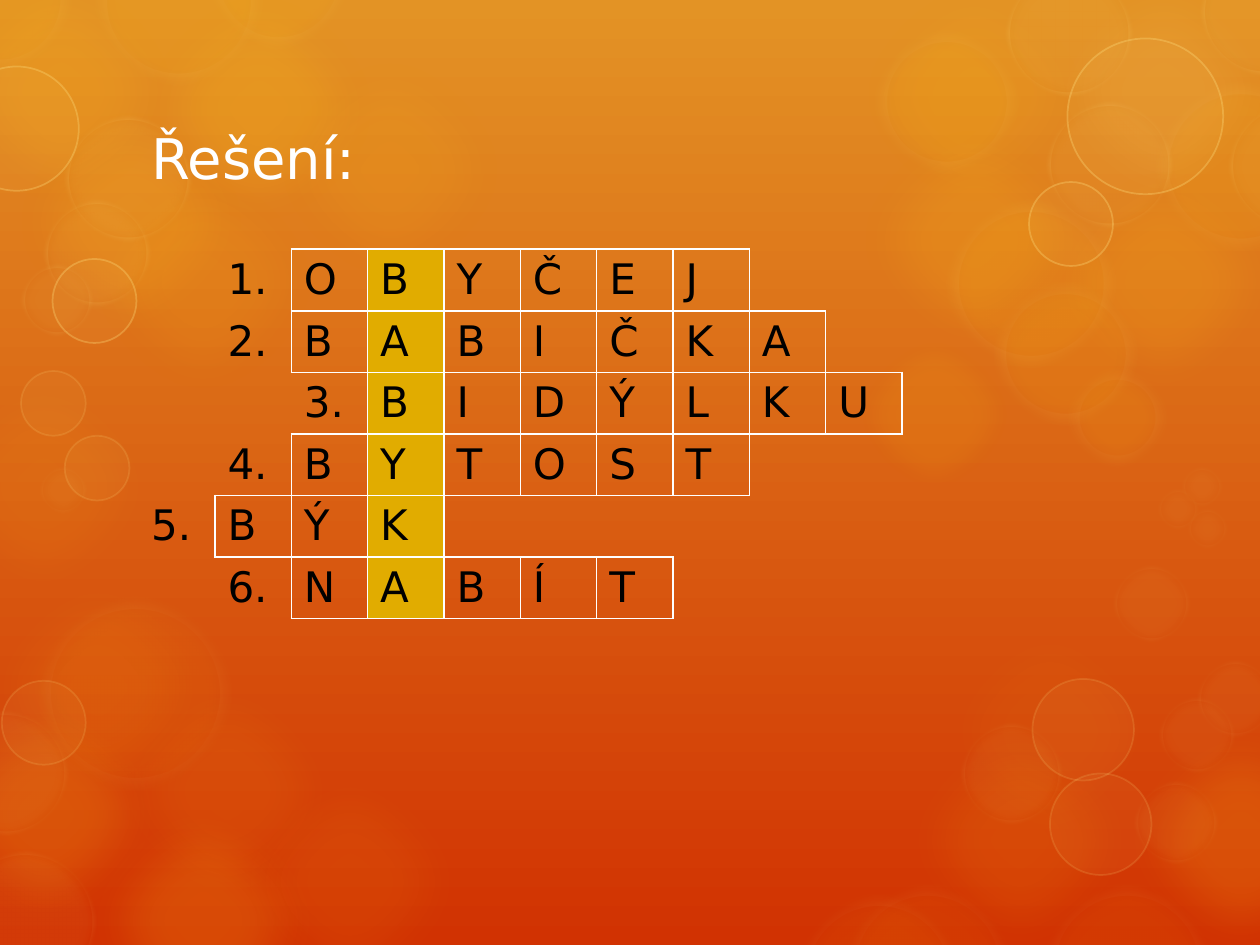
from typing import NamedTuple

from lxml.etree import SubElement
from pptx import Presentation
from pptx.dml.color import RGBColor
from pptx.enum.shapes import MSO_SHAPE as Shape
from pptx.enum.text import MSO_ANCHOR as Anchor, PP_ALIGN as Align
from pptx.oxml import parse_xml
from pptx.oxml.ns import nsdecls, qn
from pptx.util import Pt

TOP = RGBColor(0xE3, 0x93, 0x25)
BASE = RGBColor(0xD1, 0x32, 0x02)
GOLD = RGBColor(0xFD, 0xC6, 0x1B)
CREAM = RGBColor(0xFE, 0xEB, 0xAE)
LEMON = RGBColor(0xFF, 0xE2, 0x81)
MARK = RGBColor(0xE1, 0xAC, 0x00)
WHITE = RGBColor(0xFF, 0xFF, 0xFF)
BLACK = RGBColor(0x00, 0x00, 0x00)


class Look(NamedTuple):
    """How a disc is painted: opacities in percent, lengths in points."""
    fill: RGBColor
    alpha: int
    soft: float = 0
    line: RGBColor = None
    width: float = 0
    faint: int = 0  # opacity of the outline


def glow(alpha, fill=GOLD, soft=25):
    return Look(fill, alpha, soft)


def haze(alpha, faint):
    return Look(GOLD, alpha, 10, CREAM, 14, faint)


def blur(faint):
    return Look(LEMON, 5, 5, LEMON, 5, faint)


def ring(faint):
    return Look(LEMON, 5, 0, LEMON, 1, faint)


# Discs from back to front: look, then left and top by diameter
BIG = 150
DISCS = [
    (glow(5), {BIG: [(525, 343)]}),
    (glow(8), {BIG: [(-19, 318), (55, 377), (125, 429), (-50, 203)]}),
    (glow(10), {BIG: [(41, 86), (148, 22), (482, -21), (508, 405)]}),
    (glow(15), {BIG: [(0, 52), (-40, -23), (590, 86), (482, 62)]}),
    (glow(16), {BIG: [(41, 451), (634, 405), (-49, 390)]}),
    (glow(20), {BIG: [(73, -13)]}),
    (glow(10, LEMON), {BIG: [(590, -23)]}),
    (glow(10, soft=12), {96: [(486, 189)]}),
    (haze(10, 6), {
        57: [(610, 210)],
        82: [(500, 17), (568, 161), (118, -54), (-41, -41)],
        96: [(661, 47), (541, 114), (54, -47)]}),
    (haze(6, 4), {
        96: [(454, 511), (482, 505), (596, 505)],
        110: [(22, 341)]}),
    (blur(30), {
        41: [(12, 151)],
        61: [(25, 114)],
        72: [(37, 66), (575, -17), (686, -29), (702, 59), (598, 58)]}),
    (blur(15), {
        24: [(675, 266), (661, 279), (678, 290)],
        28: [(22, 266)],
        44: [(636, 323), (662, 398), (684, 377)],
        48: [(648, 446)],
        58: [(549, 413)],
        71: [(-32, 406)],
        81: [(-26, 486)]}),
    (ring(30), {
        48: [(30, 148), (588, 104)],
        71: [(-26, 38)],
        89: [(610, 22)]}),
    (ring(15), {
        37: [(12, 212), (37, 249)],
        48: [(1, 389)],
        58: [(600, 442), (590, 388)]}),
]

# Crossword: every answer crosses the key word in the key column
ROWS = ["OBYČEJ", "BABIČKA", "BIDÝLKU", "BYTOST", "BÝK", "NABÍT"]
KEY = "BABYKA"
SPINE = 3
COLS = 10


def layout():
    """Letters and row numbers of the crossword, by (row, column)."""
    letters, labels = {}, {}
    for r, (word, key) in enumerate(zip(ROWS, KEY)):
        start = SPINE - word.index(key)
        labels[r, start - 1] = f"{r + 1}."
        for c, char in enumerate(word, start):
            letters[r, c] = char
    return letters, labels


class Deck:
    font = "DejaVu Sans"

    def __init__(self):
        self.prs = Presentation()
        self.prs.slide_width, self.prs.slide_height = Pt(720), Pt(540)
        self.slide = self.prs.slides.add_slide(self.prs.slide_layouts[5])

    def style(self, para, size, color):
        para.alignment = Align.LEFT
        para.font.name = self.font
        para.font.size = Pt(size)
        para.font.color.rgb = color

    def back(self, *colors):
        fill = self.slide.background.fill
        fill.gradient()
        fill.gradient_angle = 270
        for stop, color in zip(fill.gradient_stops, colors):
            stop.color.rgb = color

    def disc(self, x, y, size, look):
        oval = self.slide.shapes.add_shape(
            Shape.OVAL, Pt(x), Pt(y), Pt(size), Pt(size))
        oval.shadow.inherit = False
        oval.fill.solid()
        oval.fill.fore_color.rgb = look.fill
        if look.line:
            oval.line.color.rgb = look.line
            oval.line.width = Pt(look.width)
        else:
            oval.line.fill.background()
        # Opacity of fill and outline, then the soft edge
        props = oval.element.spPr
        tints = list(props.iter(qn("a:srgbClr")))
        for tint, part in zip(tints, (look.alpha, look.faint)):
            SubElement(tint, qn("a:alpha"), val=str(part * 1000))
        if look.soft:
            SubElement(props.find(qn("a:effectLst")), qn("a:softEdge"),
                       rad=str(Pt(look.soft)))

    def title(self, text, x, y, w, h):
        box = self.slide.shapes.title
        box.left, box.top, box.width, box.height = Pt(x), Pt(y), Pt(w), Pt(h)
        box.text_frame.text = text
        box.text_frame.vertical_anchor = Anchor.MIDDLE
        self.style(box.text_frame.paragraphs[0], 32, WHITE)
        box.element.getparent().append(box.element)  # bring to front

    def edge(self, cell, index, side, shown):
        paint = (f'<a:solidFill><a:srgbClr val="{WHITE}"/></a:solidFill>'
                 if shown else "<a:noFill/>")
        cell._tc.get_or_add_tcPr().insert(index, parse_xml(
            f'<a:ln{side} {nsdecls("a")} w="{Pt(1)}">{paint}</a:ln{side}>'))

    def puzzle(self, x, y, wide, high):
        letters, labels = layout()
        texts = letters | labels
        table = self.slide.shapes.add_table(
            len(ROWS), COLS, Pt(x), Pt(y), Pt(wide * COLS),
            Pt(high * len(ROWS))).table
        table.first_row = table.horz_banding = False
        for col in table.columns:
            col.width = Pt(wide)
        for r, row in enumerate(table.rows):
            row.height = Pt(high)
            for c, cell in enumerate(row.cells):
                cell.text = texts.get((r, c), "")
                self.style(cell.text_frame.paragraphs[0], 24, BLACK)
                if c == SPINE:
                    cell.fill.solid()
                    cell.fill.fore_color.rgb = MARK
                else:
                    cell.fill.background()
                # An edge shows where a letter lies on either side of it
                near = {"L": (r, c - 1), "R": (r, c + 1),
                        "T": (r - 1, c), "B": (r + 1, c)}
                for i, (side, spot) in enumerate(near.items()):
                    self.edge(cell, i, side,
                              (r, c) in letters or spot in letters)


def main():
    deck = Deck()

    # Background lights
    deck.back(TOP, BASE)
    for look, sizes in DISCS:
        for size, spots in sizes.items():
            for x, y in spots:
                deck.disc(x, y, size, look)

    # Crossword and title
    deck.puzzle(79.2, 142.4, 43.63, 35.2)
    deck.title("Řešení:", 79.2, 53.5, 561, 73)
    deck.prs.save("out.pptx")


if __name__ == "__main__":
    main()
